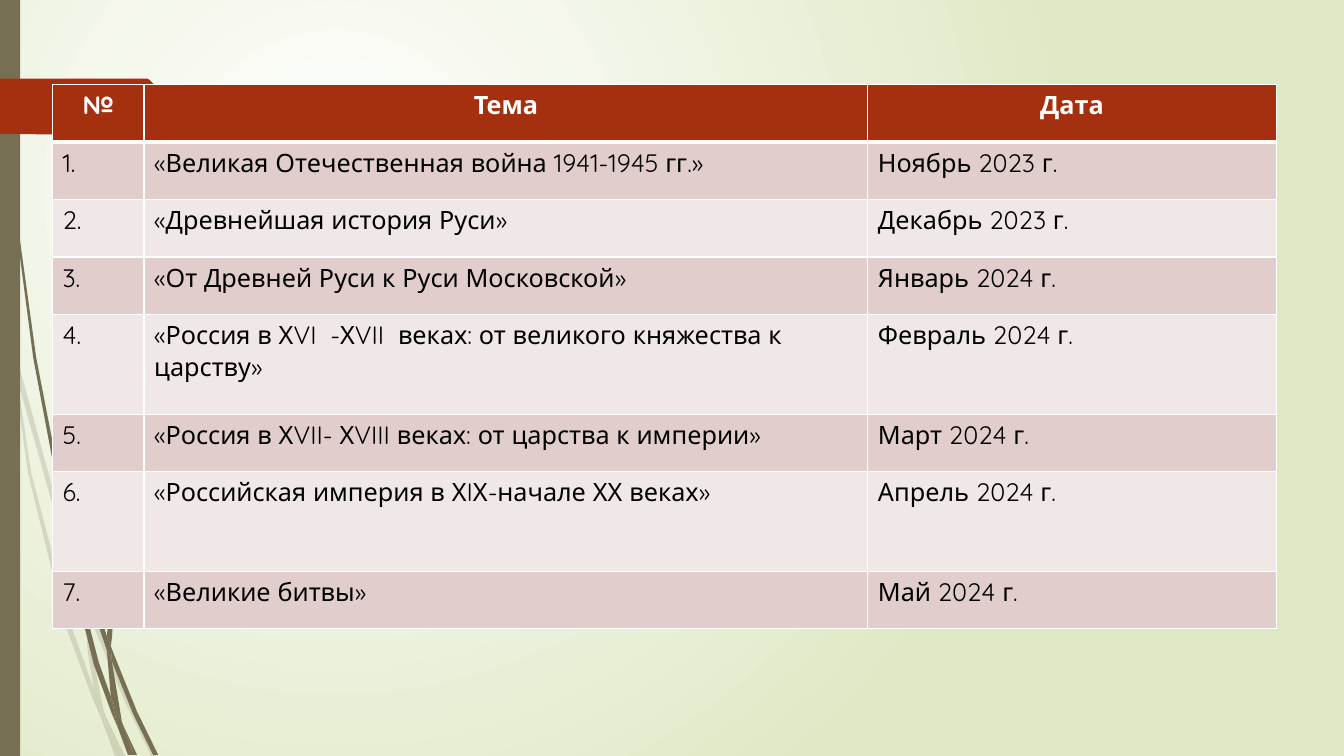
"""Build a slide with the quiz timetable on a background of wispy grass."""
from dataclasses import dataclass

from lxml.etree import SubElement
from pptx import Presentation
from pptx.dml.color import RGBColor
from pptx.dml.fill import FillFormat
from pptx.enum.shapes import MSO_SHAPE as Preset
from pptx.enum.text import PP_ALIGN as Align
from pptx.oxml import parse_xml
from pptx.oxml.ns import nsdecls, qn
from pptx.shapes.shapetree import GroupShapes, SlideShapes
from pptx.slide import Slide
from pptx.table import _Cell as Cell
from pptx.util import Pt

FONT = "Quicksand"
OLIVE, RUST, WHITE, BLACK = "766F54", "A53010", "FFFFFF", "000000"
BANDS = ("E1CDCC", "F0E8E7")
OUTLINE_UNIT = Pt(0.72)
COLUMN_WIDTHS = (65.5, 517, 291.6)
SINGLE, DOUBLE = 41.04, 71.28

Outline = tuple[tuple[int, int], ...]


@dataclass(frozen=True)
class Grass:
    opacity: int
    blades: tuple[Outline, ...]


@dataclass(frozen=True)
class Quiz:
    theme: str
    date: str
    height: float = SINGLE


PALE_GRASS = Grass(20, (
    ((11, 350), (9, 322), (0, 282), (0, 299), (10, 344)),
    ((58, 522), (84, 599), (85, 586), (62, 520), (14, 345), (17, 376)),
    ((92, 607), (88, 596), (88, 610), (123, 694), (150, 750), (155, 750), (127, 692)),
    ((119, 750), (124, 750), (105, 711)),
    ((93, 683), (70, 619), (31, 469), (17, 376), (11, 350), (28, 470), (65, 621),
     (92, 693), (101, 714), (99, 707)),
    ((84, 599), (87, 646), (93, 683), (96, 692), (105, 711), (103, 706), (91, 646),
     (88, 610), (88, 608)),
    ((88, 584), (92, 541), (110, 462), (160, 349), (229, 245), (268, 198), (290, 175),
     (312, 154), (312, 153), (289, 175), (268, 197), (228, 244), (158, 348), (107, 461),
     (90, 541), (85, 584), (85, 586), (88, 596)),
    ((101, 714), (114, 750), (119, 750)),
    ((88, 608), (88, 610), (88, 596), (85, 586), (84, 599)),
    ((96, 692), (93, 683), (99, 707), (101, 714), (119, 750), (105, 711)),
))

DARK_GRASS = Grass(100, (
    ((7, 110), (17, 233), (33, 355), (56, 477), (57, 481), (55, 457), (55, 453),
     (36, 355), (19, 232), (8, 109), (5, 48), (4, 0), (3, 0), (4, 48)),
    ((88, 592), (106, 645), (106, 633), (106, 631), (93, 590), (60, 472), (64, 505)),
    ((113, 649), (110, 641), (111, 656), (132, 708), (152, 749), (157, 749), (136, 706)),
    ((110, 691), (98, 657), (72, 556), (64, 505), (57, 477), (68, 557), (93, 659),
     (111, 708), (117, 722), (116, 717)),
    ((60, 472), (58, 453), (54, 349), (58, 245), (63, 193), (70, 141), (62, 193),
     (56, 245), (52, 349), (55, 449)),
    ((133, 749), (136, 749), (122, 719)),
    ((57, 477), (64, 505), (60, 472), (55, 449), (55, 453)),
    ((111, 633), (114, 592), (125, 552), (158, 476), (205, 406), (231, 374), (245, 359),
     (261, 344), (260, 344), (245, 358), (231, 373), (204, 405), (156, 474), (122, 551),
     (110, 591), (106, 631), (110, 641)),
    ((117, 722), (127, 749), (131, 749)),
    ((106, 645), (110, 691), (116, 706), (122, 719), (121, 716), (111, 656), (109, 651)),
    ((106, 645), (109, 651), (111, 656), (110, 641), (106, 631), (106, 633)),
    ((116, 706), (110, 691), (116, 717), (117, 722), (130, 749), (133, 749), (122, 719)),
))

TAB: Outline = ((173, 108), (148, 133), (146, 134), (136, 134), (0, 133), (0, 78),
                (146, 78), (148, 79), (173, 104), (174, 106))

QUIZZES = (
    Quiz("«Великая Отечественная война 1941-1945 гг.»", "Ноябрь 2023 г."),
    Quiz("«Древнейшая история Руси»", "Декабрь 2023 г."),
    Quiz("«От Древней Руси к Руси Московской»", "Январь 2024 г."),
    Quiz("«Россия в ХVI  -ХVII  веках: от великого княжества к царству»",
         "Февраль 2024 г.", DOUBLE),
    Quiz("«Россия в ХVII- ХVIII веках: от царства к империи»", "Март 2024 г."),
    Quiz("«Российская империя в ХIХ-начале ХХ веках»", "Апрель 2024 г.", DOUBLE),
    Quiz("«Великие битвы»", "Май 2024 г."),
)


def color(code: str) -> RGBColor:
    return RGBColor.from_string(code)


def paint(fill: FillFormat, code: str) -> None:
    fill.solid()
    fill.fore_color.rgb = color(code)


def paint_background(slide: Slide) -> None:
    fill = slide.background.fill
    fill.gradient()
    for stop, code in zip(fill.gradient_stops, (WHITE, "DFE8C4")):
        stop.color.rgb = color(code)
    gradient = slide.element.find(f".//{qn('a:gradFill')}")
    gradient.replace(gradient.find(qn("a:lin")), parse_xml(
        f'<a:path {nsdecls("a")} path="circle">'
        '<a:fillToRect l="50000" t="50000" r="100000" b="100000"/></a:path>'))


def draw_outline(shapes: SlideShapes | GroupShapes, outline: Outline, code: str,
                 opacity: int = 100) -> None:
    start, *rest = outline
    builder = shapes.build_freeform(*start, scale=OUTLINE_UNIT)
    builder.add_line_segments(rest, close=True)
    shape = builder.convert_to_shape()
    shape.shadow.inherit = False
    paint(shape.fill, code)
    shape.line.fill.background()
    if opacity < 100:
        tint = shape.element.spPr.find(f"{qn('a:solidFill')}/{qn('a:srgbClr')}")
        SubElement(tint, qn("a:alpha")).set("val", str(opacity * 1000))


def draw_grass(slide: Slide, grass: Grass) -> None:
    tuft = slide.shapes.add_group_shape()
    for blade in grass.blades:
        draw_outline(tuft.shapes, blade, OLIVE, grass.opacity)


def draw_side_bar(slide: Slide) -> None:
    bar = slide.shapes.add_shape(Preset.RECTANGLE, Pt(0), Pt(0), Pt(14.4), Pt(540))
    bar.shadow.inherit = False
    paint(bar.fill, OLIVE)
    bar.line.fill.background()


def add_borders(cell: Cell, top: float, bottom: float) -> None:
    properties = cell._tc.get_or_add_tcPr()
    widths = {"lnL": 1, "lnR": 1, "lnT": top, "lnB": bottom}
    for index, (side, width) in enumerate(widths.items()):
        properties.insert(index, parse_xml(
            f'<a:{side} {nsdecls("a")} w="{Pt(width)}"><a:solidFill>'
            f'<a:srgbClr val="{WHITE}"/></a:solidFill></a:{side}>'))


def fill_cell(cell: Cell, text: str, row: int) -> None:
    heading = row == 0
    cell.text = text
    paragraph = cell.text_frame.paragraphs[0]
    paragraph.alignment = Align.CENTER if heading else Align.LEFT
    paragraph.font.name = FONT
    paragraph.font.size = Pt(18)
    paragraph.font.bold = heading
    paragraph.font.color.rgb = color(WHITE if heading else BLACK)
    paint(cell.fill, RUST if heading else BANDS[(row - 1) % 2])
    add_borders(cell, top=3 if row == 1 else 1, bottom=3 if heading else 1)


def draw_timetable(slide: Slide) -> None:
    rows = [("№", "Тема", "Дата")]
    rows += [(f"{number}.", quiz.theme, quiz.date) for number, quiz in enumerate(QUIZZES, 1)]
    heights = [SINGLE] + [quiz.height for quiz in QUIZZES]
    timetable = slide.shapes.add_table(
        len(rows), len(COLUMN_WIDTHS), Pt(37.44), Pt(60.48),
        Pt(sum(COLUMN_WIDTHS)), Pt(sum(heights))).table
    for column, width in zip(timetable.columns, COLUMN_WIDTHS):
        column.width = Pt(width)
    for row, (texts, height) in enumerate(zip(rows, heights)):
        timetable.rows[row].height = Pt(height)
        for column, text in enumerate(texts):
            fill_cell(timetable.cell(row, column), text, row)


def main() -> None:
    deck = Presentation()
    deck.slide_width, deck.slide_height = Pt(960), Pt(540)
    slide = deck.slides.add_slide(deck.slide_layouts[6])
    paint_background(slide)
    draw_grass(slide, PALE_GRASS)
    draw_grass(slide, DARK_GRASS)
    draw_side_bar(slide)
    draw_outline(slide.shapes, TAB, RUST)
    draw_timetable(slide)
    deck.save("out.pptx")


if __name__ == "__main__":
    main()
